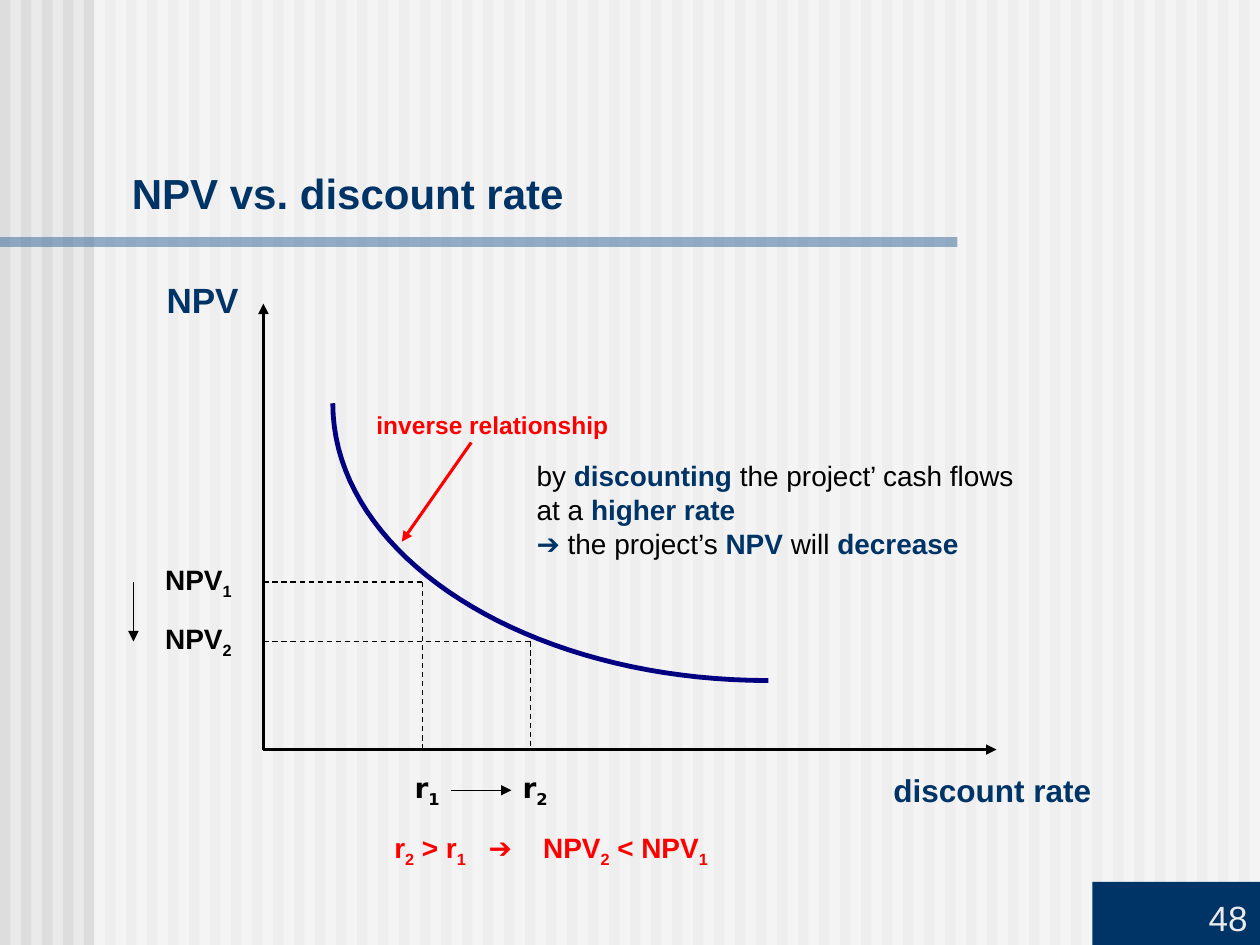
import copy
import dataclasses

import lxml.etree
import pptx
import pptx.dml.color
import pptx.enum.dml
import pptx.enum.shapes
import pptx.enum.text
import pptx.oxml.ns
import pptx.util

Cm = pptx.util.Cm
Pt = pptx.util.Pt
RGBColor = pptx.dml.color.RGBColor
Align = pptx.enum.text.PP_ALIGN
Anchor = pptx.enum.text.MSO_ANCHOR


@dataclasses.dataclass(frozen=True)
class Theme:
    font: str = "Arial"
    rate_font: str = "DejaVu Sans"
    background: str = "EAEAEA"
    stripe: str = "DDDDDD"
    white: str = "FFFFFF"
    rule: str = "336699"
    navy: str = "003366"
    curve: str = "000080"
    black: str = "000000"
    red: str = "FF0000"
    title_size: int = 24
    large_size: int = 20
    axis_size: int = 18
    body_size: int = 16
    note_size: int = 14


@dataclasses.dataclass(frozen=True)
class Box:
    left: float
    top: float
    width: float
    height: float

    def inner(self, left, top, width, height):
        return Box(self.left + left, self.top + top, width, height)

    def point(self, x, y):
        return Cm(self.left + x), Cm(self.top + y)

    def lengths(self):
        return Cm(self.left), Cm(self.top), Cm(self.width), Cm(self.height)


THEME = Theme()
SUBSCRIPT = {"baseline": -25}
STRONG = {"color": THEME.navy, "bold": True}


def add_xml(parent, tag, **attributes):
    return lxml.etree.SubElement(parent, pptx.oxml.ns.qn(tag), attributes)


def format_run(run, size, color, bold, font, baseline=0):
    run.font.size = Pt(size)
    run.font.bold = bold
    run.font.name = font
    run.font.color.rgb = RGBColor.from_string(color)
    if baseline:
        run._r.get_or_add_rPr().set("baseline", str(baseline * 1000))


def add_text(slide, box, paragraphs, shape=None, align=Align.LEFT, anchor=Anchor.MIDDLE,
             margins=(0, 0, 0, 0), tabs=(), size=THEME.body_size, color=THEME.black,
             bold=False, font=THEME.font):
    shape = shape or slide.shapes.add_textbox(*box.lengths())
    frame = shape.text_frame
    frame.word_wrap = True
    frame.vertical_anchor = anchor
    (frame.margin_left, frame.margin_top,
     frame.margin_right, frame.margin_bottom) = map(Cm, margins)
    base = {"size": size, "color": color, "bold": bold, "font": font}
    for index, runs in enumerate(paragraphs):
        paragraph = frame.add_paragraph() if index else frame.paragraphs[0]
        paragraph.alignment = align
        if tabs:
            tab_list = add_xml(paragraph._p.get_or_add_pPr(), "a:tabLst")
            for position in tabs:
                add_xml(tab_list, "a:tab", pos=str(Cm(position)), algn="l")
        for text, changes in runs:
            if text == "\n":
                properties = copy.deepcopy(paragraph.runs[-1]._r.rPr)
                paragraph.add_line_break()
                paragraph._p[-1].append(properties)
                continue
            run = paragraph.add_run()
            run.text = text
            format_run(run, **{**base, **changes})


def add_rectangle(slide, box, color, opacity=100):
    shape = slide.shapes.add_shape(pptx.enum.shapes.MSO_SHAPE.RECTANGLE, *box.lengths())
    shape.shadow.inherit = False
    shape.line.fill.background()
    shape.fill.solid()
    shape.fill.fore_color.rgb = RGBColor.from_string(color)
    if opacity < 100:
        color_element = shape._element.spPr.find(".//" + pptx.oxml.ns.qn("a:srgbClr"))
        add_xml(color_element, "a:alpha", val=str(opacity * 1000))
    return shape


def add_line(slide, box, start, end, width=0.75, color=THEME.black, dashed=False, arrow=False):
    connector = slide.shapes.add_connector(
        pptx.enum.shapes.MSO_CONNECTOR.STRAIGHT, *box.point(*start), *box.point(*end))
    connector.line.width = Pt(width)
    connector.line.color.rgb = RGBColor.from_string(color)
    if dashed:
        connector.line.dash_style = pptx.enum.dml.MSO_LINE.DASH
    if arrow:
        add_xml(connector.line._get_or_add_ln(), "a:tailEnd", type="triangle")
    add_xml(connector._element.spPr, "a:effectLst")


def add_curve(slide, box, controls, steps=40):
    points = []
    for step in range(steps + 1):
        t = step / steps
        weights = ((1 - t) ** 3, 3 * t * (1 - t) ** 2, 3 * t ** 2 * (1 - t), t ** 3)
        points.append(box.point(*(
            sum(weight * control[axis] for weight, control in zip(weights, controls))
            for axis in (0, 1))))
    builder = slide.shapes.build_freeform(*points[0])
    builder.add_line_segments(points[1:], close=False)
    shape = builder.convert_to_shape()
    shape.shadow.inherit = False
    shape.fill.background()
    shape.line.color.rgb = RGBColor.from_string(THEME.curve)
    shape.line.width = Pt(2.75)


def draw_backdrop(slide, box, stripes=60):
    slide.background.fill.solid()
    slide.background.fill.fore_color.rgb = RGBColor.from_string(THEME.background)
    pitch = box.width / stripes
    for index in range(stripes):
        add_rectangle(slide, box.inner(index * pitch, 0, pitch / 2, box.height), THEME.stripe)
    add_rectangle(slide, box.inner(1.9, 0, box.width - 1.9, box.height), THEME.white, opacity=50)


def draw_title(slide, box):
    add_rectangle(slide, box.inner(0, 1.53, 19.3, 0.2), THEME.rule, opacity=50)
    add_text(slide, box.inner(2.66, 0, box.width - 2.96, 1.14), [[("NPV vs. discount rate", {})]],
             size=THEME.title_size, color=THEME.navy, bold=True, anchor=Anchor.BOTTOM)


def draw_page_number(slide, box):
    panel = add_rectangle(slide, box, THEME.navy)
    add_text(slide, box, [[("48", {})]], shape=panel, align=Align.RIGHT, anchor=Anchor.BOTTOM,
             margins=(0.25, 0.13, 0.25, 0.13), size=THEME.large_size, color=THEME.background)


def draw_npv_graph(slide, box):
    origin_x, origin_y = origin = (2.62, 9.57)
    rates = (5.82, 8.0)
    values = (6.19, 7.39)
    for end in ((origin_x, 0.58), (17.4, origin_y)):
        add_line(slide, box, origin, end, width=2, arrow=True)
    add_curve(slide, box, ((12.8, 8.18), (7.95, 8.18), (4.02, 5.69), (4.02, 2.59)))

    centred = {"align": Align.CENTER, "bold": True}
    add_text(slide, box.inner(14.61, 9.78, 5.41, 1.19), [[("discount rate", {})]],
             size=THEME.axis_size, color=THEME.navy, **centred)
    add_text(slide, box.inner(0, 0, 2.79, 0.99), [[("NPV", {})]],
             size=THEME.large_size, color=THEME.navy, **centred)
    for number, (rate, value) in enumerate(zip(rates, values), start=1):
        add_line(slide, box, (rate, value), (rate, origin_y), dashed=True)
        add_line(slide, box, (origin_x, value), (rate, value), dashed=True)
        subscript = (str(number), SUBSCRIPT)
        add_text(slide, box.inner(0.41, value - 0.6, 1.8, 1.19),
                 [[("NPV", {}), subscript]], **centred)
        add_text(slide, box.inner(rate - 0.8, 9.78, 1.8, 1.19),
                 [[("r", {}), subscript]], font=THEME.rate_font, **centred)
    add_line(slide, box, (6.4, 10.39), (7.62, 10.39), arrow=True)
    add_line(slide, box, (0, values[0]), (0, values[1]), arrow=True)

    add_text(slide, box.inner(8.13, 3.71, 12.4, 2.03), [
        [("by ", {}), ("discounting", STRONG), (" the project’ cash flows", {}), ("\n", {}),
         ("at a ", {}), ("higher rate", STRONG)],
        [("➔", {"color": THEME.navy}), (" the project’s ", {}), ("NPV", STRONG),
         (" will ", {}), ("decrease", STRONG)],
    ], anchor=Anchor.TOP)
    add_text(slide, box.inner(5.26, 11.2, 7, 0.79), [[
        ("r", {}), ("2", SUBSCRIPT), (" > r", {}), ("1", SUBSCRIPT), ("\t➔\tNPV", {}),
        ("2", SUBSCRIPT), (" < NPV", {}), ("1", SUBSCRIPT),
    ]], tabs=(1.9, 3), color=THEME.red, bold=True)
    add_text(slide, box.inner(4.9, 2.59, 5.6, 0.73), [[("inverse relationship", {})]],
             size=THEME.note_size, color=THEME.red, bold=True, anchor=Anchor.BOTTOM)
    add_line(slide, box, (6.81, 3.38), (5.41, 5.38), width=1.75, color=THEME.red, arrow=True)


def main():
    presentation = pptx.Presentation()
    page = Box(0, 0, 25.4, 19.05)
    presentation.slide_width, presentation.slide_height = page.lengths()[2:]
    slide = presentation.slides.add_slide(presentation.slide_layouts[6])
    draw_backdrop(slide, page)
    draw_page_number(slide, page.inner(22.02, 17.78, 3.38, 1.27))
    draw_title(slide, page.inner(0, 3.25, page.width, 1.73))
    draw_npv_graph(slide, page.inner(2.69, 5.54, 20.53, 12))
    presentation.save("out.pptx")


if __name__ == "__main__":
    main()
